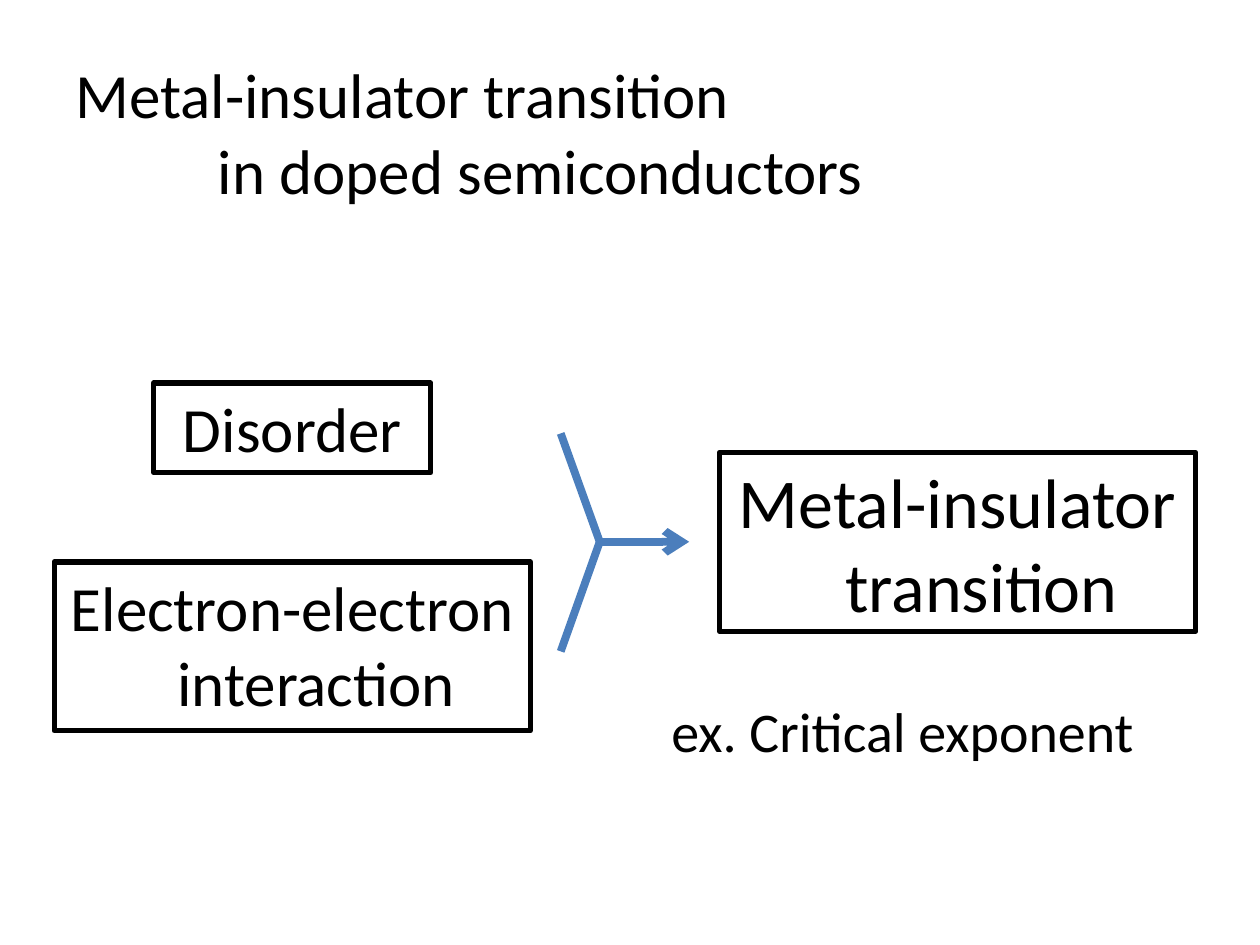
from lxml.etree import SubElement
from pptx import Presentation
from pptx.dml.color import RGBColor
from pptx.enum.shapes import MSO_CONNECTOR, MSO_SHAPE
from pptx.enum.text import MSO_ANCHOR, PP_ALIGN
from pptx.oxml.ns import qn
from pptx.util import Inches, Pt

COLORS = {"text": "000000", "border": "000000", "arrow": "4B7EBC"}
HANG = Inches(0.38)


def style(p, size, align, margin=0, indent=0):
    p.alignment = align
    pPr = p._p.get_or_add_pPr()
    pPr.set("marL", str(margin))
    pPr.set("indent", str(indent))
    for r in p.runs:
        r.font.name = "Calibri"
        r.font.size = Pt(size)
        r.font.color.rgb = RGBColor.from_string(COLORS["text"])


prs = Presentation()
prs.slide_width, prs.slide_height = Inches(10), Inches(7.5)
s = prs.slides.add_slide(prs.slide_layouts[6])

# Title, second line indented
tf = s.shapes.add_textbox(Inches(0.5), Inches(0.3), Inches(9), Inches(1.48)).text_frame
tf.word_wrap = True
tf.vertical_anchor = MSO_ANCHOR.MIDDLE
tf.text = "Metal-insulator transition\nin doped semiconductors"
for p, margin in zip(tf.paragraphs, (0, 1.13)):
    style(p, 36, PP_ALIGN.LEFT, Inches(margin))

# Causes, effect and example: text, box, size, framed
labels = [
    ("Disorder", (1.22, 3.04, 2.2, 0.71), 36, True),
    ("Electron-electron interaction", (0.43, 4.46, 3.78, 1.34), 36, True),
    ("Metal-insulator transition", (5.71, 3.59, 3.78, 1.42), 40, True),
    ("ex. Critical exponent", (5.08, 5.48, 4.17, 0.63), 32, False),
]
for text, box, size, framed in labels:
    box = [Inches(v) for v in box]
    if framed:
        sp = s.shapes.add_shape(MSO_SHAPE.RECTANGLE, *box)
        sp.shadow.inherit = False
        sp.fill.background()
        sp.line.color.rgb = RGBColor.from_string(COLORS["border"])
        sp.line.width = Pt(3)
    else:
        sp = s.shapes.add_textbox(*box)
    tf = sp.text_frame
    tf.word_wrap = True
    tf.vertical_anchor = MSO_ANCHOR.TOP
    tf.text = text
    p = tf.paragraphs[0]
    p.space_before = Pt(2)
    style(p, size, PP_ALIGN.CENTER, HANG, -HANG)

# Two branches meet and lead on to the effect
joint = (4.76, 4.3)
branches = [
    ((4.45, 3.44), joint, False),
    (joint, (5.47, 4.3), True),
    ((4.45, 5.17), joint, False),
]
for start, end, arrow in branches:
    ends = [Inches(v) for v in start + end]
    c = s.shapes.add_connector(MSO_CONNECTOR.STRAIGHT, *ends)
    c.line.color.rgb = RGBColor.from_string(COLORS["arrow"])
    c.line.width = Pt(4.5)
    if arrow:
        SubElement(c.line._get_or_add_ln(), qn("a:tailEnd"), type="arrow")
    SubElement(c._element.spPr, qn("a:effectLst"))

prs.save("out.pptx")
